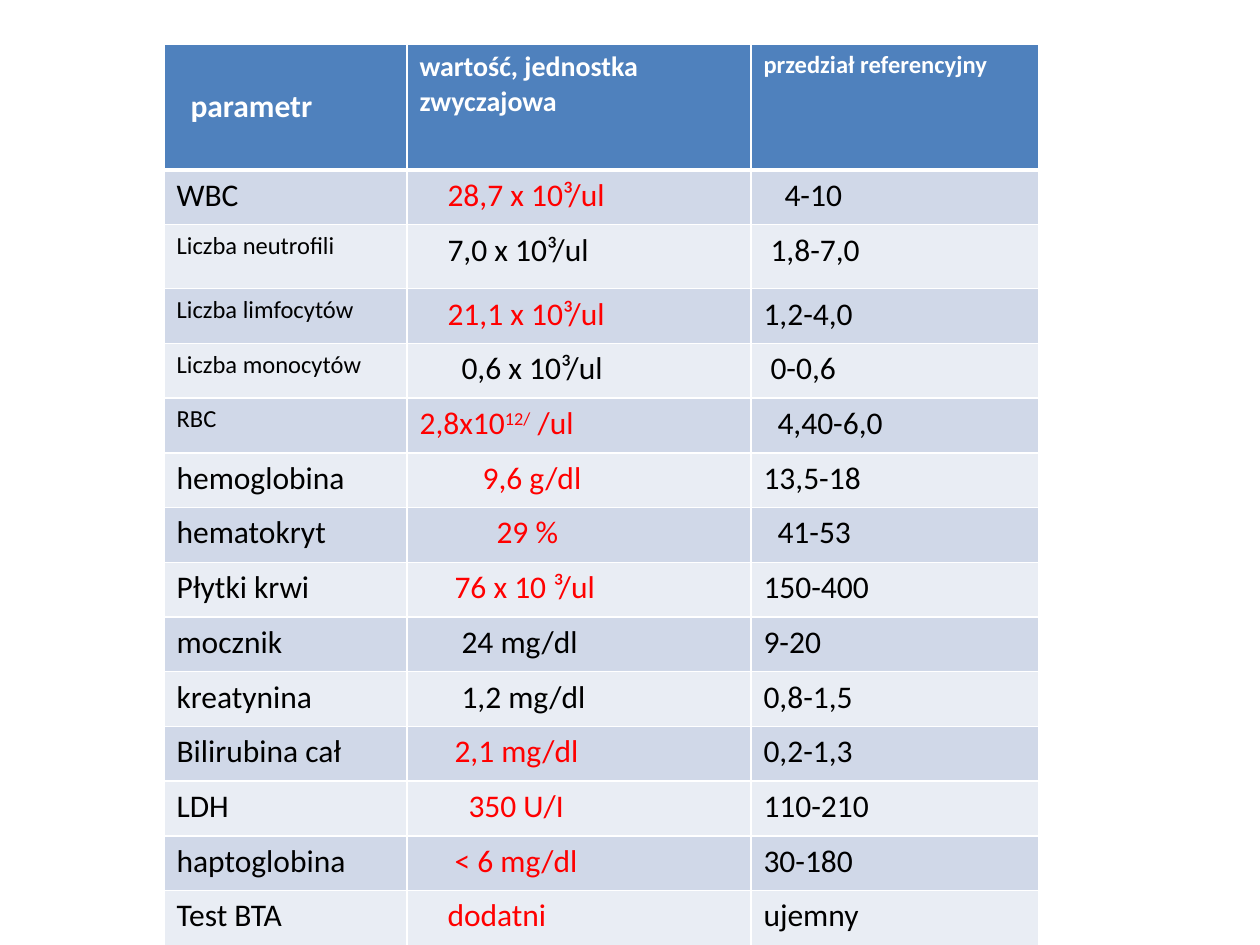
from pptx import Presentation
from pptx import util as u
from pptx.dml.color import RGBColor
from pptx.enum import text
from pptx.oxml import parse_xml
from pptx.oxml.ns import nsdecls

PX = 914400 / 126
WHITE, BLACK, RED = "FFFFFF", "000000", "FF0000"
HEADER_FILL, BANDS = "4F81BD", ("D0D8E8", "E9EDF4")
SPACE = 7
LEFT, TOP = 164, 44
COLUMNS = (243, 344, 288)
HEADER_HEIGHT, ROW_HEIGHT, NEUTROPHIL_HEIGHT = 126, 54.75, 64

HEADERS = [
    ("parametr", 18, 2),
    ("wartość, jednostka zwyczajowa", 16, 0),
    ("przedział referencyjny", 14, 0),
]
# parameter, its size, value, value indent, value colour, range, range indent
RESULTS = [
    ("WBC", 18, "28,7 x 10³/ul", 4, RED, "4-10", 3),
    ("Liczba neutrofili", 14, "7,0 x 10³/ul", 4, BLACK, "1,8-7,0", 1),
    ("Liczba limfocytów", 14, "21,1 x 10³/ul", 4, RED, "1,2-4,0", 0),
    ("Liczba monocytów", 14, "0,6 x 10³/ul", 6, BLACK, "0-0,6", 1),
    ("RBC", 14, "2,8x10^12/^ /ul", 0, RED, "4,40-6,0", 2),
    ("hemoglobina", 18, "9,6 g/dl", 9, RED, "13,5-18", 0),
    ("hematokryt", 18, "29 %", 11, RED, "41-53", 2),
    ("Płytki krwi", 18, "76 x 10 ³/ul", 5, RED, "150-400", 0),
    ("mocznik", 18, "24 mg/dl", 6, BLACK, "9-20", 0),
    ("kreatynina", 18, "1,2 mg/dl", 6, BLACK, "0,8-1,5", 0),
    ("Bilirubina cał", 18, "2,1 mg/dl", 5, RED, "0,2-1,3", 0),
    ("LDH", 18, "350 U/I", 7, RED, "110-210", 0),
    ("haptoglobina", 18, "< 6 mg/dl", 5, RED, "30-180", 0),
    ("Test BTA", 18, "dodatni", 4, RED, "ujemny", 0),
]


def px(n):
    return u.Emu(round(n * PX))


def rgb(value):
    return RGBColor.from_string(value)


def set_borders(cell, widths):
    tcPr = cell._tc.get_or_add_tcPr()
    for side, width in widths.items():
        tcPr.append(parse_xml(
            f'<a:ln{side} {nsdecls("a")} w="{u.Pt(width)}"><a:solidFill>'
            f'<a:srgbClr val="{WHITE}"/></a:solidFill></a:ln{side}>'))


def fill_cell(cell, content, size, indent, color, fill, borders, bold=False):
    set_borders(cell, borders)
    cell.fill.solid()
    cell.fill.fore_color.rgb = rgb(fill)
    cell.margin_left = u.Inches(0.1) + px(indent * SPACE)
    p = cell.text_frame.paragraphs[0]
    for i, part in enumerate(content.split("^")):
        r = p.add_run()
        r.text = part
        for name, value in dict(name="Calibri", size=u.Pt(size), bold=bold).items():
            setattr(r.font, name, value)
        r.font.color.rgb = rgb(color)
        if i % 2:
            r._r.get_or_add_rPr().set("baseline", "30000")


prs = Presentation()
prs.slide_width, prs.slide_height = u.Inches(10), u.Inches(7.5)
s = prs.slides.add_slide(prs.slide_layouts[6])

heights = [HEADER_HEIGHT] + [ROW_HEIGHT] * len(RESULTS)
heights[2] = NEUTROPHIL_HEIGHT
table = s.shapes.add_table(len(heights), len(COLUMNS), px(LEFT), px(TOP),
                           px(sum(COLUMNS)), px(sum(heights))).table
for column, width in zip(table.columns, COLUMNS):
    column.width = px(width)
for row, height in zip(table.rows, heights):
    row.height = px(height)

for c, (content, size, indent) in enumerate(HEADERS):
    fill_cell(table.cell(0, c), content, size, indent, WHITE, HEADER_FILL,
              dict(L=1, R=1, T=1, B=3), bold=True)
table.cell(0, 0).vertical_anchor = text.MSO_ANCHOR.MIDDLE

for i, (name, size, value, value_indent, color, span, span_indent) in enumerate(RESULTS):
    cells = [(name, size, 0, BLACK), (value, 18, value_indent, color),
             (span, 18, span_indent, BLACK)]
    borders = dict(L=1, R=1, T=1 if i else 3, B=1)
    for c, cell in enumerate(cells):
        fill_cell(table.cell(i + 1, c), *cell, BANDS[i % 2], borders)

prs.save("out.pptx")
